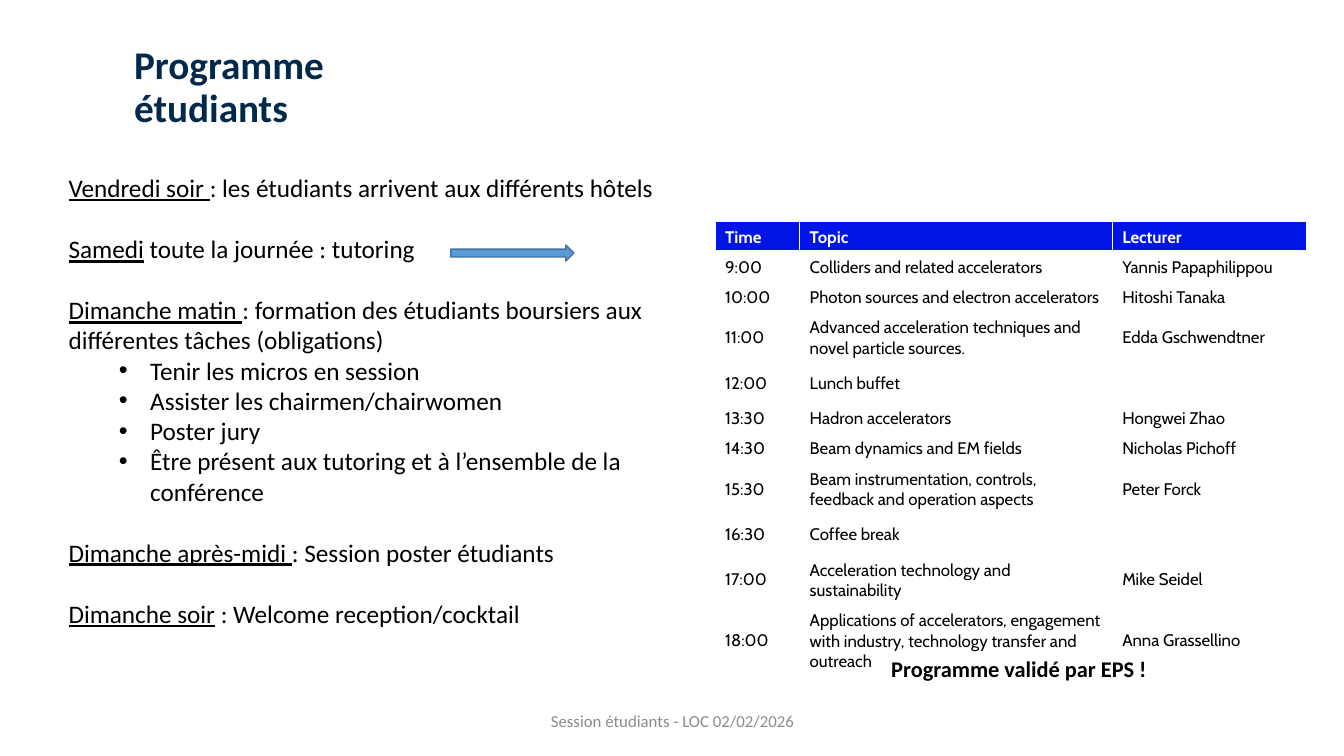
from dataclasses import dataclass

from lxml.etree import SubElement
from pptx import Presentation
from pptx.dml.color import RGBColor
from pptx.enum.shapes import MSO_SHAPE
from pptx.enum.text import MSO_ANCHOR, MSO_AUTO_SIZE, PP_ALIGN
from pptx.oxml import parse_xml
from pptx.oxml.ns import nsdecls, qn
from pptx.util import Inches, Pt

WIDTH, HEIGHT = Inches(13.33), Inches(7.5)
COLORS = {"title": "00294B", "text": "000000", "footer": "8C8C8C", "white": "FFFFFF",
          "header": "0014E6", "arrow": "5B9BD5", "arrow_line": "43739E"}

# Underlined lead, rest of the sentence, bulleted tasks
PLAN = [
    ("Vendredi soir ", ": les étudiants arrivent aux différents hôtels", []),
    ("Samedi", " toute la journée : tutoring", []),
    ("Dimanche matin ", ": formation des étudiants boursiers aux différentes tâches (obligations)",
     ["Tenir les micros en session", "Assister les chairmen/chairwomen", "Poster jury",
      "Être présent aux tutoring et à l’ensemble de la conférence"]),
    ("Dimanche après-midi ", ": Session poster étudiants", []),
    ("Dimanche soir", " : Welcome reception/cocktail", []),
]

# Time, topic, lecturer, row height in inches
ONE_LINE, TWO_LINES, THREE_LINES, BREAK = 0.29, 0.49, 0.69, 0.39
LECTURES = [
    ("Time", "Topic", "Lecturer", ONE_LINE),
    ("9:00", "Colliders and related accelerators", "Yannis Papaphilippou", ONE_LINE),
    ("10:00", "Photon sources and electron accelerators", "Hitoshi Tanaka", ONE_LINE),
    ("11:00", "Advanced acceleration techniques and novel particle sources.",
     "Edda Gschwendtner", TWO_LINES),
    ("12:00", "Lunch buffet", "", BREAK),
    ("13:30", "Hadron accelerators", "Hongwei Zhao", ONE_LINE),
    ("14:30", "Beam dynamics and EM fields", "Nicholas Pichoff", ONE_LINE),
    ("15:30", "Beam instrumentation, controls, feedback and operation aspects",
     "Peter Forck", TWO_LINES),
    ("16:30", "Coffee break", "", BREAK),
    ("17:00", "Acceleration technology and sustainability", "Mike Seidel", TWO_LINES),
    ("18:00", "Applications of accelerators, engagement with industry, "
     "technology transfer and outreach", "Anna Grassellino", THREE_LINES),
]
COLUMN_SHARES = (0.143, 0.528, 0.329)


@dataclass
class Box:
    left: int
    top: int
    width: int
    height: int

    def inner(self, left, top, width, height):
        """Inner box, given in percent of this one."""
        return Box(int(self.left + self.width * left / 100),
                   int(self.top + self.height * top / 100),
                   int(self.width * width / 100), int(self.height * height / 100))

    def bounds(self):
        return self.left, self.top, self.width, self.height


def rgb(name):
    return RGBColor.from_string(COLORS[name])


def set_font(paragraph, size, color, bold=False, name="Calibri"):
    font = paragraph.font
    font.name, font.size, font.bold = name, Pt(size), bold
    font.color.rgb = rgb(color)


def place(shape, box):
    shape.left, shape.top, shape.width, shape.height = box.bounds()


def set_bullet(paragraph, bullet):
    properties = paragraph._p.get_or_add_pPr()
    properties.set("marL", str(Inches(0.81 if bullet else 0)))
    properties.set("indent", str(Inches(-0.31 if bullet else 0)))
    if bullet:
        SubElement(properties, qn("a:buFont")).set("typeface", "Arial")
        SubElement(properties, qn("a:buChar")).set("char", bullet)
    else:
        SubElement(properties, qn("a:buNone"))


def set_borders(cell, top, bottom):
    properties = cell._tc.get_or_add_tcPr()
    for position, (side, points) in enumerate(zip("LRTB", (1, 1, top, bottom))):
        properties.insert(position, parse_xml(
            f'<a:ln{side} {nsdecls("a")} w="{Pt(points)}"><a:solidFill>'
            f'<a:srgbClr val="{COLORS["white"]}"/></a:solidFill></a:ln{side}>'))


def add_title(slide, box):
    title = slide.shapes.title
    place(title, box)
    frame = title.text_frame
    frame.text = "Programme étudiants"
    frame.vertical_anchor = MSO_ANCHOR.MIDDLE
    frame.auto_size = MSO_AUTO_SIZE.NONE
    paragraph = frame.paragraphs[0]
    paragraph.alignment, paragraph.line_spacing = PP_ALIGN.LEFT, 0.9
    set_font(paragraph, 28, "title", bold=True)


def add_label(slide, box, text, size, color, bold=False, wrap=True,
              alignment=PP_ALIGN.LEFT, anchor=MSO_ANCHOR.TOP):
    frame = slide.shapes.add_textbox(*box.bounds()).text_frame
    frame.text = text
    frame.word_wrap, frame.vertical_anchor = wrap, anchor
    paragraph = frame.paragraphs[0]
    paragraph.alignment = alignment
    set_font(paragraph, size, color, bold)


def add_plan(slide, box):
    body = slide.placeholders[1]
    place(body, box)
    frame = body.text_frame
    frame.auto_size = MSO_AUTO_SIZE.NONE
    frame.vertical_anchor = MSO_ANCHOR.TOP
    for index, (lead, rest, tasks) in enumerate(PLAN):
        paragraph = frame.add_paragraph() if index else frame.paragraphs[0]
        paragraph.space_before = Pt(22 if index else 0)
        set_bullet(paragraph, None)
        set_font(paragraph, 18, "text")
        run = paragraph.add_run()
        run.text, run.font.underline = lead, True
        paragraph.add_run().text = rest
        for task in tasks:
            paragraph = frame.add_paragraph()
            paragraph.text, paragraph.level = task, 1
            paragraph.space_before = Pt(0)
            set_bullet(paragraph, "•")
            set_font(paragraph, 18, "text")

    arrow = slide.shapes.add_shape(MSO_SHAPE.RIGHT_ARROW, *box.inner(61.2, 15.6, 19.2, 3.2).bounds())
    arrow.shadow.inherit = False
    arrow.fill.solid()
    arrow.fill.fore_color.rgb = rgb("arrow")
    arrow.line.color.rgb = rgb("arrow_line")
    arrow.line.width = Pt(1)


def add_lectures(slide, box):
    table = slide.shapes.add_table(len(LECTURES), len(COLUMN_SHARES), *box.bounds()).table
    table.horz_banding = False
    for column, share in zip(table.columns, COLUMN_SHARES):
        column.width = int(box.width * share)
    for index, (*texts, height) in enumerate(LECTURES):
        table.rows[index].height = Inches(height)
        header = index == 0
        for cell, text in zip(table.rows[index].cells, texts):
            cell.vertical_anchor = MSO_ANCHOR.MIDDLE
            if header:
                cell.fill.solid()
                cell.fill.fore_color.rgb = rgb("header")
            else:
                cell.fill.background()
            set_borders(cell, top=3 if index == 1 else 1, bottom=3 if header else 1)
            if text:
                cell.text = text
                set_font(cell.text_frame.paragraphs[0], 12, "white" if header else "text",
                         bold=header, name="Cabin")
    add_label(slide, box.inner(28.1, 100, 47.2, 8.7), "Programme validé par EPS !",
              16, "text", bold=True, wrap=False)


def main():
    presentation = Presentation()
    presentation.slide_width, presentation.slide_height = WIDTH, HEIGHT
    slide = presentation.slides.add_slide(presentation.slide_layouts[1])
    page = Box(0, 0, WIDTH, HEIGHT)
    add_title(slide, page.inner(9.23, 8.53, 26.4, 6.27))
    add_label(slide, page.inner(33.16, 92.67, 33.76, 5.33), "Session étudiants - LOC 02/02/2026",
              12, "footer", alignment=PP_ALIGN.CENTER, anchor=MSO_ANCHOR.MIDDLE)
    add_plan(slide, page.inner(4.35, 22.13, 47.7, 66))
    add_lectures(slide, page.inner(53.2, 29.33, 44.04, 56.67))
    presentation.save("out.pptx")


if __name__ == "__main__":
    main()
